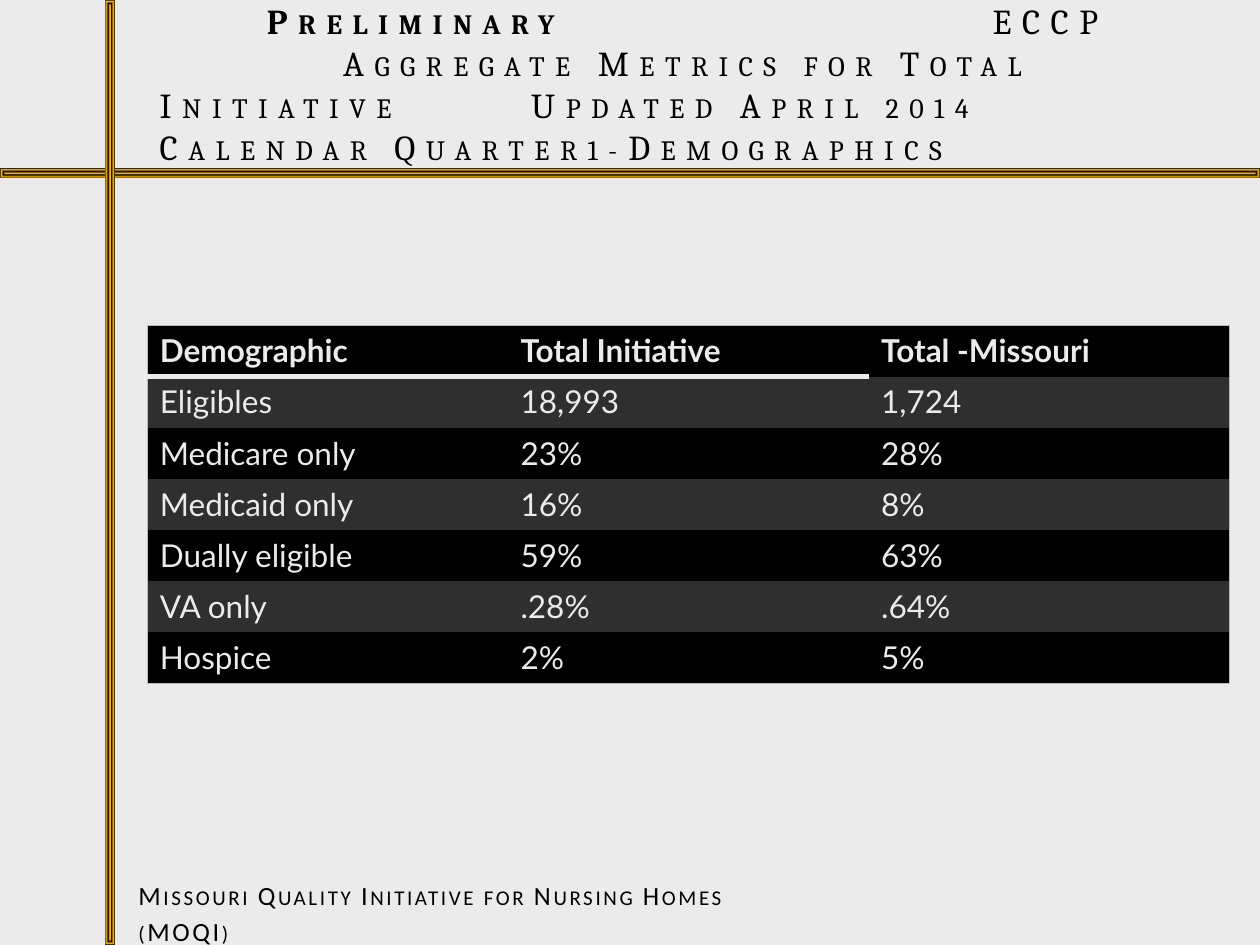
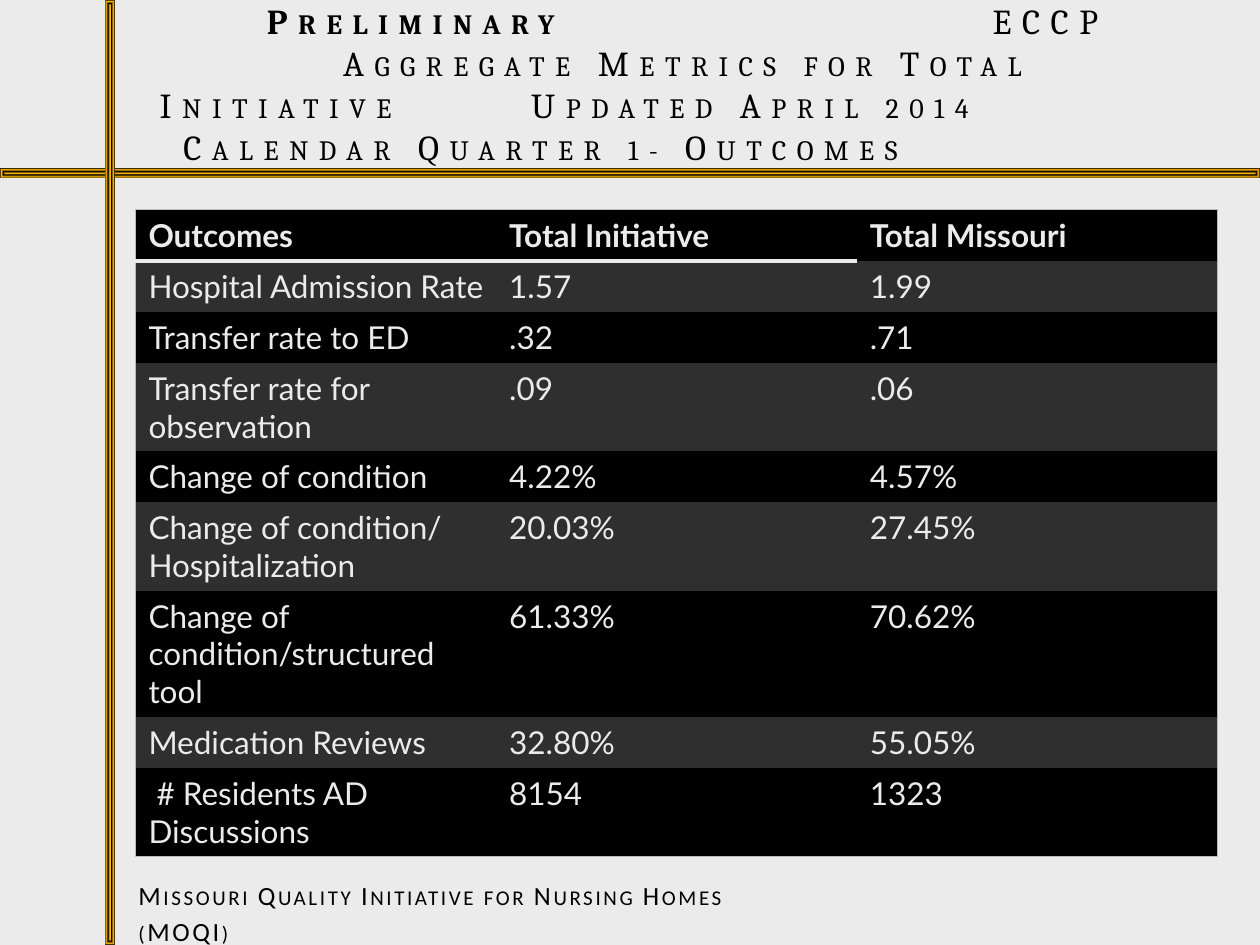
from lxml.etree import SubElement
from pptx import Presentation
from pptx.dml.color import RGBColor
from pptx.enum.shapes import MSO_SHAPE
from pptx.enum.text import MSO_ANCHOR, MSO_AUTO_SIZE, PP_ALIGN
from pptx.oxml import parse_xml
from pptx.oxml.ns import nsdecls, qn
from pptx.util import Cm, Pt

PAPER = RGBColor(0xEB, 0xEB, 0xEB)
BLACK = RGBColor(0x00, 0x00, 0x00)
STRIPE = RGBColor(0x2F, 0x2F, 0x2F)
GOLD = RGBColor(0xFF, 0xB6, 0x00)
EDGE = RGBColor(0xB9, 0xB9, 0xB9)

PLAIN_TABLE_STYLE = "{2D5ABB26-0587-4C30-8999-92F81FD0307C}"
BAR_STOPS = [(0, GOLD), (30, BLACK), (70, GOLD), (100, BLACK)]
TITLE_TABS = (7.49, 8.89, 14.63)
FOOTER = "Missouri Quality Initiative for Nursing Homes (MOQI)"
TITLE_START = "Preliminary"
TITLE_REST = ("\t\tECCP Aggregate Metrics for Total Initiative\t"
              "Updated April 2014\tCalendar ")

DEMOGRAPHICS = [
    ("Demographic", "Total Initiative", "Total -Missouri"),
    ("Eligibles", "18,993", "1,724"),
    ("Medicare only", "23%", "28%"),
    ("Medicaid only", "16%", "8%"),
    ("Dually eligible", "59%", "63%"),
    ("VA only", ".28%", ".64%"),
    ("Hospice", "2%", "5%"),
]
OUTCOMES = [
    ("Outcomes", "Total Initiative", "Total Missouri"),
    ("Hospital Admission Rate", "1.57", "1.99"),
    ("Transfer rate to ED", ".32", ".71"),
    ("Transfer rate for observation", ".09", ".06"),
    ("Change of condition", "4.22%", "4.57%"),
    ("Change of condition/ Hospitalization", "20.03%", "27.45%"),
    ("Change of condition/structured tool", "61.33%", "70.62%"),
    ("Medication Reviews", "32.80%", "55.05%"),
    (" # Residents AD Discussions", "8154", "1323"),
]


def add_span(para, text, font, size, color=BLACK, bold=False, spacing=0, small_caps=False):
    """Append a run; spacing is the letter spacing in points."""
    span = para.add_run()
    span.text = text
    span.font.name = font
    span.font.size = Pt(size)
    span.font.bold = bold
    span.font.color.rgb = color
    properties = span.font._element
    if spacing:
        properties.set("spc", str(round(spacing * 100)))
    if small_caps:
        properties.set("cap", "small")


def add_tab_stops(para, stops):
    tab_list = SubElement(para._p.get_or_add_pPr(), qn("a:tabLst"))
    for stop in stops:
        SubElement(tab_list, qn("a:tab"), pos=str(Cm(stop)), algn="l")


def set_border(cell, side, color, width):
    """Draw one side (L, R, T or B); call in that order and before filling."""
    cell._tc.get_or_add_tcPr().append(parse_xml(
        f'<a:ln{side} {nsdecls("a")} w="{Pt(width)}"><a:solidFill>'
        f'<a:srgbClr val="{color}"/></a:solidFill></a:ln{side}>'))


class MetricsDeck:
    """The deck's style together with the slide being built."""

    def __init__(self):
        self.deck = Presentation()
        self.deck.slide_width = Cm(25.4)
        self.deck.slide_height = Cm(19.05)
        self.page = None

    def new_page(self, title_end):
        self.page = self.deck.slides.add_slide(self.deck.slide_layouts[6])
        fill = self.page.background.fill
        fill.solid()
        fill.fore_color.rgb = PAPER
        self.add_bar(0, 3.39, 25.4, 0.21)
        self.add_footer()
        self.add_bar(2.11, 0, 0.21, 19.05)
        self.add_title(title_end)

    def add_bar(self, left, top, width, height):
        bar = self.page.shapes.add_shape(
            MSO_SHAPE.RECTANGLE, Cm(left), Cm(top), Cm(width), Cm(height))
        bar.shadow.inherit = False
        bar.line.fill.background()
        stops = "".join(
            f'<a:gs pos="{place * 1000}"><a:srgbClr val="{color}"/></a:gs>'
            for place, color in BAR_STOPS)
        bar._element.spPr.find(qn("a:prstGeom")).addnext(parse_xml(
            f'<a:gradFill {nsdecls("a")}><a:gsLst>{stops}</a:gsLst><a:path path="shape">'
            '<a:fillToRect l="50000" t="50000" r="50000" b="50000"/></a:path></a:gradFill>'))

    def add_text_box(self, left, top, width, height):
        box = self.page.shapes.add_textbox(Cm(left), Cm(top), Cm(width), Cm(height))
        box.text_frame.word_wrap = True
        return box.text_frame

    def add_footer(self):
        frame = self.add_text_box(2.54, 17.5, 14.17, 0.94)
        frame.auto_size = MSO_AUTO_SIZE.SHAPE_TO_FIT_TEXT
        para = frame.paragraphs[0]
        para.line_spacing = 1.15
        add_span(para, FOOTER, "Calibri", 15, spacing=1.5, small_caps=True)

    def add_title(self, title_end):
        frame = self.add_text_box(2.97, 0.2, 21.79, 2.97)
        frame.vertical_anchor = MSO_ANCHOR.MIDDLE
        para = frame.paragraphs[0]
        para.alignment = PP_ALIGN.CENTER
        add_tab_stops(para, TITLE_TABS)
        for text, bold in ((TITLE_START, True), (TITLE_REST + title_end, False)):
            add_span(para, text, "Cambria", 20, bold=bold, spacing=6, small_caps=True)

    def add_metrics_table(self, left, top, rows):
        last_row, last_column = len(rows) - 1, len(rows[0]) - 1
        frame = self.page.shapes.add_table(
            len(rows), len(rows[0]), Cm(left), Cm(top), Cm(21.81), Cm(1.03 * len(rows)))
        table = frame.table
        table._tbl.tblPr.find(qn("a:tableStyleId")).text = PLAIN_TABLE_STYLE
        for column in table.columns:
            column.width = Cm(7.27)
        for row_index, values in enumerate(rows):
            table.rows[row_index].height = Cm(1.03)
            for column_index, value in enumerate(values):
                cell = table.cell(row_index, column_index)
                outer_sides = (("L", column_index == 0), ("R", column_index == last_column),
                               ("T", row_index == 0), ("B", row_index == last_row))
                for side, is_outer in outer_sides:
                    if is_outer:
                        set_border(cell, side, EDGE, 0.75)
                if row_index == 0 and column_index < last_column:
                    set_border(cell, "B", PAPER, 3)
                cell.fill.solid()
                cell.fill.fore_color.rgb = STRIPE if row_index % 2 else BLACK
                add_span(cell.text_frame.paragraphs[0], value, "Lato", 18,
                         color=PAPER, bold=row_index == 0)


def main():
    metrics = MetricsDeck()
    metrics.new_page("Quarter1-Demographics")
    metrics.add_metrics_table(2.97, 6.56, DEMOGRAPHICS)
    metrics.new_page("Quarter 1- Outcomes")
    metrics.add_metrics_table(2.74, 4.23, OUTCOMES)
    metrics.deck.save("out.pptx")


if __name__ == "__main__":
    main()
